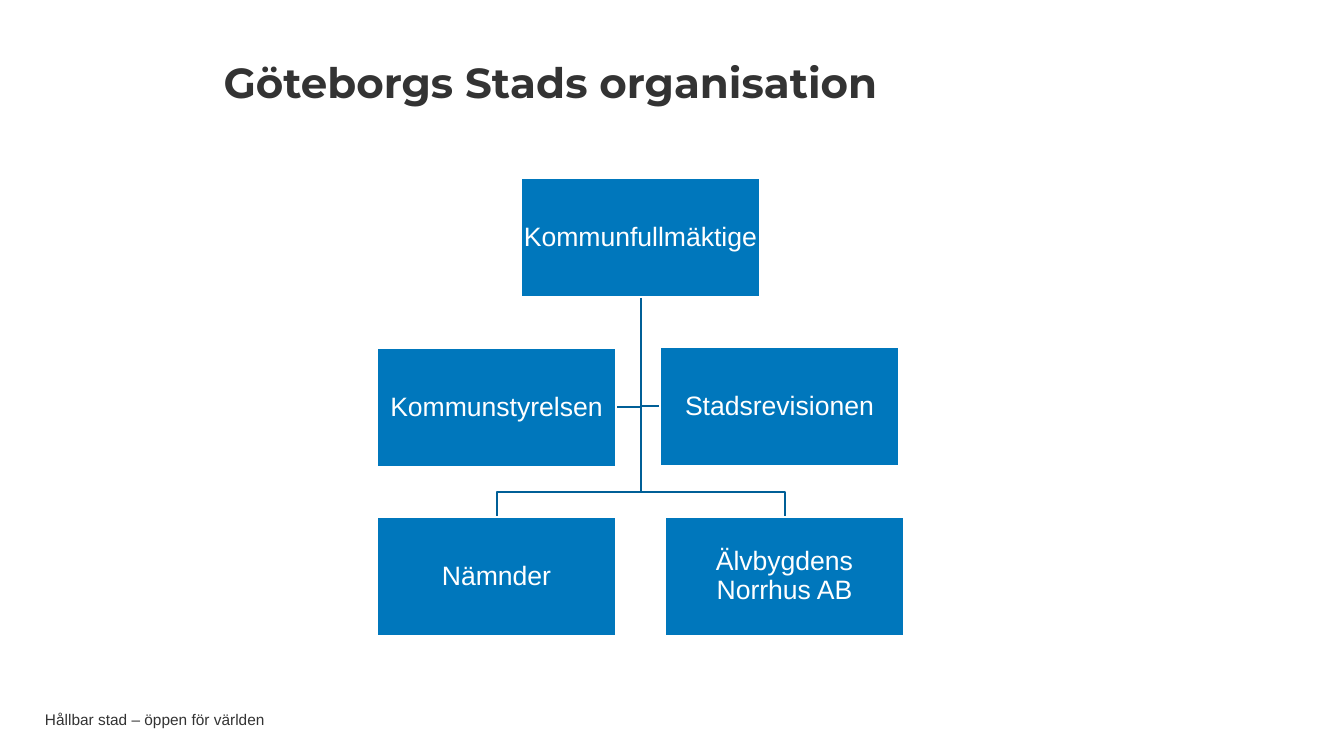
import pptx
import pptx.dml.color
import pptx.enum.text
import pptx.enum.shapes
import pptx.util

EMU_PER_PX = 914400 / 100.8
BOX_W, BOX_H = 239, 119
HALF_W, HALF_H = (BOX_W + 1) // 2, BOX_H // 2


def px(length):
    return pptx.util.Emu(round(length * EMU_PER_PX))


def color(hex_string):
    return pptx.dml.color.RGBColor.from_string(hex_string)


def write(shape, text, size, ink, font="Arial", bold=False, align="LEFT",
          line_spacing=1.0, inset_x=0, inset_y=0):
    frame = shape.text_frame
    frame.text = text
    frame.word_wrap = True
    frame.auto_size = pptx.enum.text.MSO_AUTO_SIZE.NONE
    frame.vertical_anchor = pptx.enum.text.MSO_ANCHOR.MIDDLE
    frame.margin_left = frame.margin_right = px(inset_x)
    frame.margin_top = frame.margin_bottom = px(inset_y)
    paragraph = frame.paragraphs[0]
    paragraph.alignment = getattr(pptx.enum.text.PP_ALIGN, align)
    paragraph.line_spacing = line_spacing
    run_font = paragraph.runs[0].font
    run_font.name, run_font.size, run_font.bold = font, pptx.util.Pt(size), bold
    run_font.color.rgb = color(ink)


class OrgSlide:
    INK, BLUE, LINE, WHITE = "333333", "0077BC", "005F97", "FFFFFF"

    def __init__(self, presentation):
        self.slide = presentation.slides.add_slide(presentation.slide_layouts[5])
        self.shapes = self.slide.shapes

    def title(self, text, left, top, width, height):
        title = self.shapes.title
        title.left, title.top = px(left), px(top)
        title.width, title.height = px(width), px(height)
        write(title, text, 30, self.INK, font="Montserrat", bold=True,
              align="CENTER", line_spacing=0.9, inset_y=5)

    def footer(self, text, left, top, width, height):
        footer = self.shapes.add_textbox(px(left), px(top), px(width), px(height))
        write(footer, text, 11, self.INK)

    def branch(self, *points):
        """Draw an open line with right-angled bends through the points."""
        builder = self.shapes.build_freeform(*points[0], scale=EMU_PER_PX)
        builder.add_line_segments(points[1:], close=False)
        branch = builder.convert_to_shape()
        branch.shadow.inherit = False
        branch.fill.background()
        branch.line.color.rgb = color(self.LINE)
        branch.line.width = pptx.util.Pt(1)

    def unit(self, text, left, top):
        unit = self.shapes.add_shape(pptx.enum.shapes.MSO_SHAPE.RECTANGLE,
                                     px(left), px(top), px(BOX_W), px(BOX_H))
        unit.shadow.inherit = False
        unit.fill.solid()
        unit.fill.fore_color.rgb = color(self.BLUE)
        unit.line.color.rgb = color(self.WHITE)
        unit.line.width = pptx.util.Pt(1)
        write(unit, text, 19, self.WHITE, align="CENTER", line_spacing=0.9,
              inset_x=1, inset_y=1)


def main():
    presentation = pptx.Presentation()
    presentation.slide_width, presentation.slide_height = px(1344), px(756)
    page = OrgSlide(presentation)
    page.title("Göteborgs Stads organisation", 45, 44, 1011, 82)
    page.footer("Hållbar stad – öppen för världen", 45, 711, 953, 16)

    council = ("Kommunfullmäktige", 521, 178)
    board = ("Kommunstyrelsen", 377, 348)
    audit = ("Stadsrevisionen", 660, 347)
    subordinates = [("Nämnder", 377, 517), ("Älvbygdens Norrhus AB", 665, 517)]

    trunk_x = council[1] + HALF_W
    root = (trunk_x, council[2] + BOX_H)
    for (_, left, top), edge in ((audit, 0), (board, BOX_W)):
        page.branch(root, (trunk_x, top + HALF_H), (left + edge, top + HALF_H))
    for _, left, top in subordinates:
        bend_y = top - 25
        page.branch(root, (trunk_x, bend_y), (left + HALF_W, bend_y),
                    (left + HALF_W, top))
    for unit in (council, *subordinates, board, audit):
        page.unit(*unit)
    presentation.save("out.pptx")


if __name__ == "__main__":
    main()
